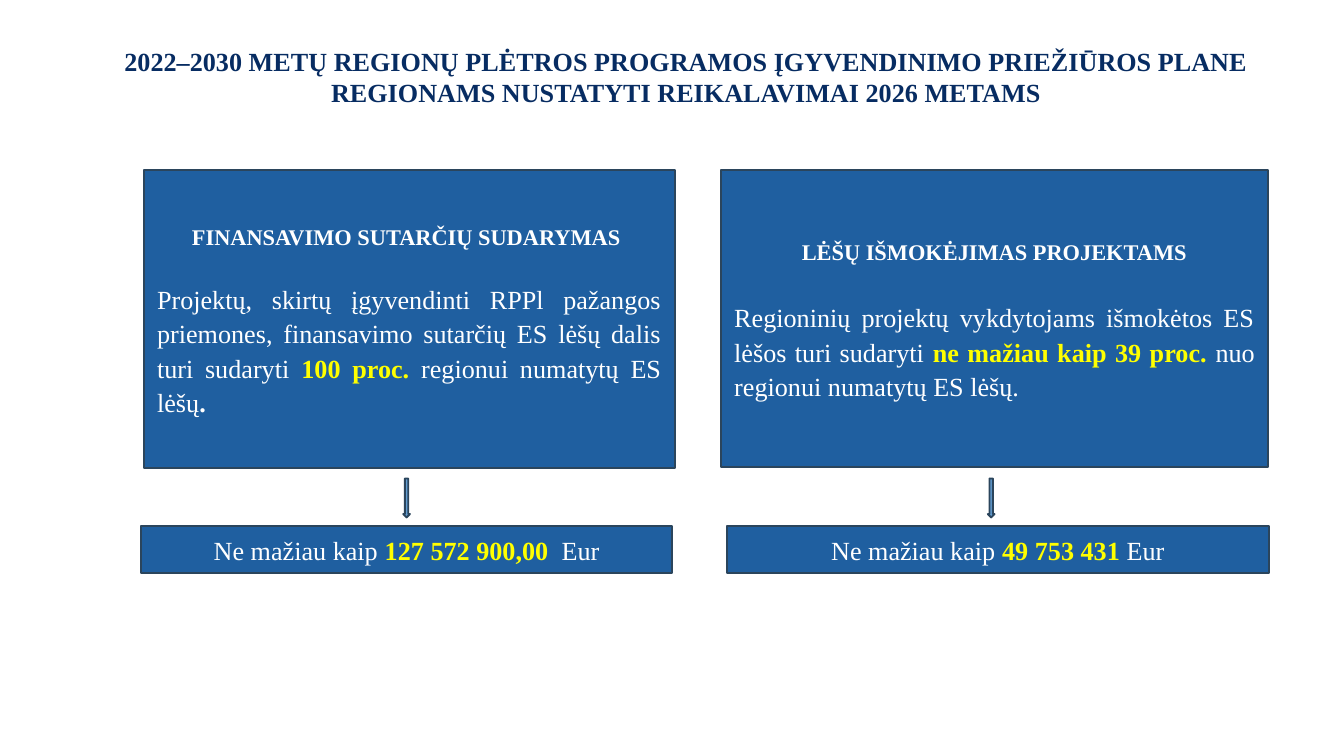
"""Build the slide on the regional programme requirements for 2026."""
import pptx
import pptx.util
import pptx.dml.color
import pptx.enum.shapes
import pptx.enum.text

SCALE = 4572
FONT = "Times New Roman"
COLORS = {
    "title": "072C62",
    "box": "1F5FA0",
    "edge": "2B455C",
    "arrow": "629DD1",
    "text": "FFFFFF",
    "key": "FFFF00",
}
ALIGN = pptx.enum.text.PP_ALIGN
ANCHOR = pptx.enum.text.MSO_ANCHOR
SHAPE = pptx.enum.shapes.MSO_SHAPE


def px(value):
    """Turn px into EMU."""
    return pptx.util.Emu(value * SCALE)


def color(name):
    """Return a named colour."""
    return pptx.dml.color.RGBColor.from_string(COLORS[name])


def write(para, text, size=14, tone="text", bold=False):
    """Add one formatted run to a paragraph."""
    run = para.add_run()
    run.text = text
    run.font.name = FONT
    run.font.size = pptx.util.Pt(size)
    run.font.bold = bold
    run.font.color.rgb = color(tone)


def mix(para, parts):
    """Write plain and key parts in turn."""
    for part, tone in zip(parts, ("text", "key", "text")):
        write(para, part, tone=tone, bold=tone == "key")


def add_block(slide, kind, place, fill):
    """Add a filled and outlined shape."""
    shape = slide.shapes.add_shape(kind, *map(px, place))
    shape.shadow.inherit = False
    shape.fill.solid()
    shape.fill.fore_color.rgb = color(fill)
    shape.line.color.rgb = color("edge")
    shape.line.width = pptx.util.Pt(1)
    return shape


def add_box(slide, place):
    """Add a text box block and return its frame."""
    frame = add_block(slide, SHAPE.RECTANGLE, place, "box").text_frame
    frame.word_wrap = True
    frame.vertical_anchor = ANCHOR.MIDDLE
    frame.paragraphs[0].alignment = ALIGN.CENTER
    return frame


def add_card(slide, place, head, parts, gap, end=""):
    """Add a box with a heading and a justified body."""
    frame = add_box(slide, place)
    top = frame.paragraphs[0]
    write(top, head, size=12, bold=True)
    body = frame.add_paragraph()
    body.alignment = ALIGN.JUSTIFY
    body.space_before = pptx.util.Pt(gap)
    mix(body, parts)
    if end:
        write(body, end, bold=True)
    for para in (top, body):
        para.line_spacing = 1.1


def add_sum(slide, place, value):
    """Add a box with the least sum."""
    para = add_box(slide, place).paragraphs[0]
    mix(para, ("Ne mažiau kaip ", value, "Eur"))


def add_title(slide, place, text):
    """Place and write the title."""
    title = slide.shapes.title
    title.left, title.top, title.width, title.height = map(px, place)
    frame = title.text_frame
    frame.word_wrap = True
    frame.auto_size = pptx.enum.text.MSO_AUTO_SIZE.SHAPE_TO_FIT_TEXT
    frame.vertical_anchor = ANCHOR.TOP
    para = frame.paragraphs[0]
    para.alignment = ALIGN.CENTER
    write(para, text, tone="title", bold=True)


def main():
    """Build and save the slide."""
    deck = pptx.Presentation()
    deck.slide_width, deck.slide_height = px(2000), px(1125)
    slide = deck.slides.add_slide(deck.slide_layouts[5])
    add_title(
        slide, (136, 57, 1770, 114),
        "2022–2030 METŲ REGIONŲ PLĖTROS PROGRAMOS ĮGYVENDINIMO PRIEŽIŪROS "
        "PLANE REGIONAMS NUSTATYTI REIKALAVIMAI 2026 METAMS")
    add_card(
        slide, (1073, 253, 814, 442), "LĖŠŲ IŠMOKĖJIMAS PROJEKTAMS",
        ("Regioninių projektų vykdytojams išmokėtos ES lėšos turi sudaryti ",
         "ne mažiau kaip 39 proc. ",
         "nuo regionui numatytų ES lėšų."), 18)
    add_card(
        slide, (214, 253, 790, 444), "FINANSAVIMO SUTARČIŲ SUDARYMAS ",
        ("Projektų, skirtų įgyvendinti RPPl pažangos priemones, finansavimo "
         "sutarčių ES lėšų dalis turi sudaryti ",
         "100 proc. ",
         "regionui numatytų ES lėšų"), 16, end=".")
    add_sum(slide, (210, 783, 790, 70), "127 572 900,00  ")
    add_sum(slide, (1082, 783, 806, 70), "49 753 431 ")
    for left in (600, 1470):
        add_block(slide, SHAPE.DOWN_ARROW, (left, 712, 10, 58), "arrow")
    deck.save("out.pptx")


if __name__ == "__main__":
    main()
